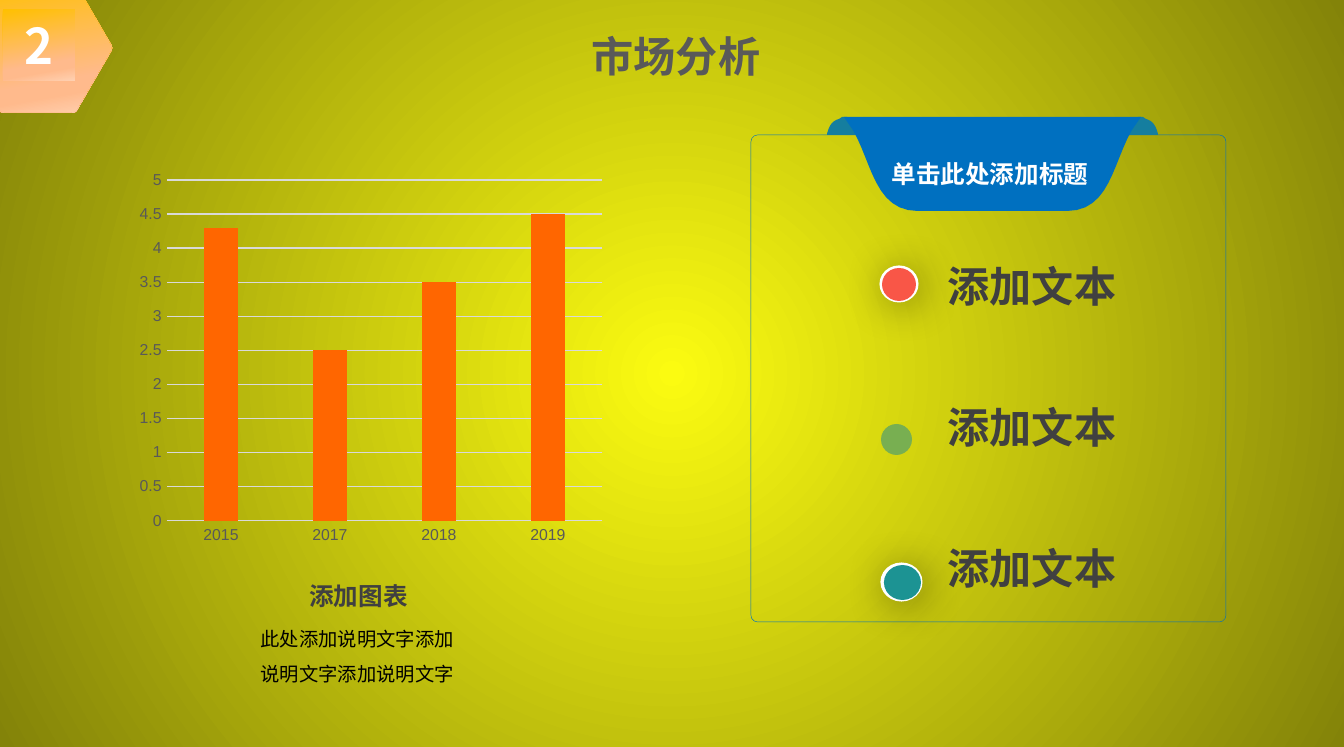
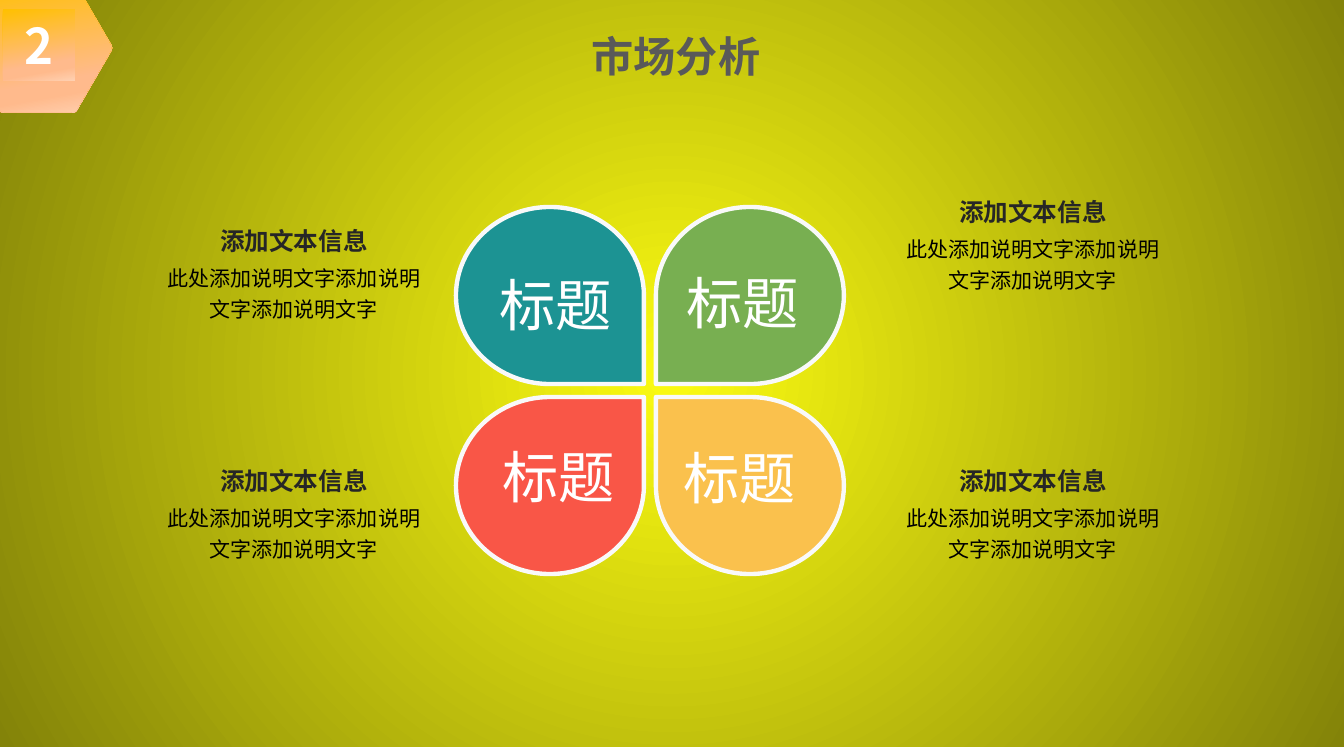
from dataclasses import dataclass
from math import cos, pi, sin

from lxml.etree import SubElement as Sub
from pptx import Presentation
from pptx.chart.data import CategoryChartData as Data
from pptx.dml.color import RGBColor as RGB
from pptx.enum.chart import XL_CHART_TYPE as Kind, XL_TICK_MARK as Tick
from pptx.enum.shapes import MSO_SHAPE as Form
from pptx.enum.text import MSO_ANCHOR as Anchor, MSO_AUTO_SIZE as Fit, PP_ALIGN as Align
from pptx.oxml.ns import qn
from pptx.util import Pt

UNIT = 914400 / 126.4
SIZE = (1344, 747)


@dataclass(frozen=True)
class Style:
    size: int
    color: str
    bold: bool = False
    align: Align = Align.LEFT
    line: float = 1.0
    before: float = 0


class Theme:
    font = "Noto Sans CJK SC"
    num_font = "Arial"
    back = ((0, "FBFB11"), (100, "838309"))
    badge = ((0, "FFC000"), (74, "FFBA8C"), (83, "FFBA8C"), (100, "FFD1B2"))
    ring = ((0, "FFF7F2"), (100, "F2F2F2"))
    teal, green, red, gold = "1C9393", "78AF51", "F95647", "FAC14D"
    blue, fold, bar = "0070C0", "157E9F", "FF6600"
    white, edge, grid, gray = "FFFFFF", "F9F9F9", "D9D9D9", "595959"
    title = Style(24, gray, True, Align.CENTER)
    number = Style(28, white, True, Align.CENTER)
    item = Style(24, "404040", True)
    next_item = Style(24, "404040", True, before=51.5)
    tag = Style(14, white, True)
    cap_head = Style(14, "404040", True, Align.CENTER)
    cap_text = Style(11, "000000", line=1.5, before=3)
    petal = Style(32, white)
    note_head = Style(14, "262626", True, Align.CENTER, 1.2)
    note_text = Style(12, "000000", False, Align.CENTER, 1.2, 3)


TITLE, NUMBER = "市场分析", "2"
ITEMS = ["添加文本"] * 3
TAG = "单击此处添加标题"
CAPTION = ("添加图表", "此处添加说明文字添加说明文字添加说明文字")
NOTE = ("添加文本信息", "此处添加说明文字添加说明文字添加说明文字")
YEARS = ("2015", "2017", "2018", "2019")
VALUES = (4.3, 2.5, 3.5, 4.5)

# ring box (or None), dot box, colour
DOTS = [
    ((882, 564, 39, 36), (884, 565, 37, 35), Theme.teal),
    (None, (881, 424, 31, 31), Theme.green),
    ((881, 267, 36, 34), (882, 268, 34, 33), Theme.red),
]
# column, row, colour, place of the label
PETALS = [
    (0, 0, Theme.teal, (487, 264)),
    (1, 1, Theme.gold, (671, 437)),
    (1, 0, Theme.green, (674, 262)),
    (0, 1, Theme.red, (490, 436)),
]
LABEL = "标题"
NOTES = [(150, 214), (889, 454), (150, 454), (889, 185)]

# Banner outlines: pairs are points, six numbers are a Bézier curve
FOLD = [(842, 117), (847, 117), (851, 119), (856, 121, 860, 126, 862, 134),
        (862, 135), (827, 135), (827, 134), (829, 126, 832, 121, 839, 119)]
HALF = [(844, 117), (853, 130), (872, 163, 875, 211, 918, 211)]
MIRROR = 1985


def px(*nums):
    return [round(n * UNIT) for n in nums]


def trace(steps):
    """Turn points and Bézier curves into plain points."""
    pts = []
    for step in steps:
        if len(step) == 2:
            pts.append(step)
            continue
        a, b, c, d = pts[-1], step[:2], step[2:4], step[4:]
        for k in range(1, 13):
            t = k / 12
            s = 1 - t
            pts.append(tuple(
                s**3 * a[i] + 3 * s * s * t * b[i] + 3 * s * t * t * c[i] + t**3 * d[i]
                for i in (0, 1)))
    return pts


def flip(pts):
    return [(MIRROR - x, y) for x, y in reversed(pts)]


def hexagon(x, y, rad, cut=0.05):
    """Corners of a hexagon, each rounded by a small curve."""
    tips = [(x + rad * cos(k * pi / 3), y + rad * sin(k * pi / 3)) for k in range(6)]
    pts = []
    for k, tip in enumerate(tips):
        start, end = ([tip[i] + cut * (far[i] - tip[i]) for i in (0, 1)]
                      for far in (tips[k - 1], tips[(k + 1) % 6]))
        for t in (0, 0.25, 0.5, 0.75, 1):
            pts.append(tuple((1 - t)**2 * start[i] + 2 * t * (1 - t) * tip[i]
                             + t * t * end[i] for i in (0, 1)))
    return pts


def blend(node, fill, stops, angle=None):
    """Gradient fill: linear at an angle, or round from the centre."""
    fill.gradient()
    grad = next(node.iter(qn("a:gradFill")))
    for part in list(grad):
        grad.remove(part)
    row = Sub(grad, qn("a:gsLst"))
    for pos, color in stops:
        stop = Sub(row, qn("a:gs"), pos=str(pos * 1000))
        Sub(stop, qn("a:srgbClr"), val=color)
    if angle is None:
        way = Sub(grad, qn("a:path"), path="circle")
        Sub(way, qn("a:fillToRect"), {side: "50000" for side in "ltrb"})
    else:
        Sub(grad, qn("a:lin"), ang=str(angle * 60000), scaled="0")


def paint(shape, fill=None, line=None, width=1.0, angle=90):
    shape.shadow.inherit = False
    if fill is None:
        shape.fill.background()
    elif isinstance(fill, str):
        shape.fill.solid()
        shape.fill.fore_color.rgb = RGB.from_string(fill)
    else:
        blend(shape.element, shape.fill, fill, angle)
    if line:
        shape.line.color.rgb = RGB.from_string(line)
        shape.line.width = Pt(width)
    else:
        shape.line.fill.background()
    return shape


def draw(slide, form, box, *look, **more):
    return paint(slide.shapes.add_shape(form, *px(*box)), *look, **more)


def outline(slide, pts, *look, **more):
    pts = [px(*pt) for pt in pts]
    pen = slide.shapes.build_freeform(*pts[0], scale=1.0)
    pen.add_line_segments(pts[1:], close=True)
    return paint(pen.convert_to_shape(), *look, **more)


def cast(shape):
    """Soft shadow down and to the right."""
    node = shape.element.spPr.find(qn("a:effectLst"))
    soft = Sub(node, qn("a:outerShdw"), blurRad=str(Pt(24)), dist=str(Pt(3)),
               dir="2700000", algn="tl", rotWithShape="0")
    Sub(Sub(soft, qn("a:srgbClr"), val="000000"), qn("a:alpha"), val="39000")


def write(frame, rows):
    frame.word_wrap = True
    frame.auto_size = Fit.NONE
    for k, (text, style) in enumerate(rows):
        par = frame.add_paragraph() if k else frame.paragraphs[0]
        par.text = text
        par.alignment = style.align
        par.line_spacing = style.line
        par.space_before = Pt(style.before)
        prop = par._p.get_or_add_pPr()
        prop.set("marL", "0")
        prop.set("indent", "0")
        Sub(prop, qn("a:buNone"))
        font = par.font
        font.size, font.bold = Pt(style.size), style.bold
        font.color.rgb = RGB.from_string(style.color)
        font.name = Theme.font
        Sub(prop.find(qn("a:defRPr")), qn("a:ea"), typeface=Theme.font)


def label(slide, box, *rows):
    write(slide.shapes.add_textbox(*px(*box)).text_frame, rows)


def hold(shape, box, rows):
    """Move a placeholder and fill it from the top."""
    shape.left, shape.top, shape.width, shape.height = px(*box)
    shape.text_frame.vertical_anchor = Anchor.TOP
    write(shape.text_frame, rows)


def start(deck, layout):
    """New slide with the shared title and numbered badge."""
    slide = deck.slides.add_slide(deck.slide_layouts[layout])
    title = slide.shapes.title
    hold(title, (537, 30, 278, 51), [(TITLE, Theme.title)])
    frame = title.text_frame
    frame.margin_left = frame.margin_right = frame.margin_top = frame.margin_bottom = 0
    for rad in (75, 74):
        outline(slide, hexagon(38, 48, rad), Theme.badge, angle=80)
    plate = draw(slide, Form.RECTANGLE, (3, 9, 72, 72), Theme.badge, angle=80)
    write(plate.text_frame, [(NUMBER, Theme.number)])
    return slide


def plot(slide, box):
    data = Data()
    data.categories = YEARS
    data.add_series("Series 1", VALUES)
    chart = slide.shapes.add_chart(Kind.COLUMN_CLUSTERED, *px(*box), data).chart
    chart.has_legend = chart.has_title = False
    chart.font.size, chart.font.name = Pt(10), Theme.num_font
    bars = chart.plots[0]
    bars.gap_width, bars.overlap, bars.vary_by_categories = 219, -27, False
    fill = bars.series[0].format.fill
    fill.solid()
    fill.fore_color.rgb = RGB.from_string(Theme.bar)
    cat, val = chart.category_axis, chart.value_axis
    for axis in (cat, val):
        axis.major_tick_mark = axis.minor_tick_mark = Tick.NONE
        font = axis.tick_labels.font
        font.size, font.name = Pt(9), Theme.num_font
        font.color.rgb = RGB.from_string(Theme.gray)
    val.minimum_scale, val.maximum_scale, val.major_unit = 0, 5, 0.5
    val.has_major_gridlines = True
    val.format.line.fill.background()
    for part in (cat, val.major_gridlines):
        part.format.line.color.rgb = RGB.from_string(Theme.grid)
        part.format.line.width = Pt(0.75)


def market(deck):
    slide = start(deck, 1)
    styles = (Theme.item, Theme.next_item, Theme.next_item)
    hold(slide.placeholders[1], (935, 254, 257, 370), list(zip(ITEMS, styles)))
    panel = draw(slide, Form.ROUNDED_RECTANGLE, (751, 135, 475, 487), None, Theme.blue, 0.25)
    panel.adjustments[0] = 0.014
    fold, half = trace(FOLD), trace(HALF)
    for pts, color in ((fold, Theme.fold), (flip(fold), Theme.fold),
                       (half + flip(half), Theme.blue)):
        outline(slide, pts, color)
    label(slide, (248, 575, 221, 118),
          *zip(CAPTION, (Theme.cap_head, Theme.cap_text)))
    for ring, dot, color in DOTS:
        if ring:
            cast(draw(slide, Form.OVAL, ring, Theme.ring, Theme.white, 1.75))
        draw(slide, Form.OVAL, dot, color)
    label(slide, (879, 153, 246, 43), (TAG, Theme.tag))
    plot(slide, (130, 163, 482, 389))


def petals(deck):
    slide = start(deck, 5)
    for col, row, color, _ in PETALS:
        box = (456 + 200 * col, 207 + 190 * row, 188, 177)
        leaf = draw(slide, Form.TEAR, box, color, Theme.edge, 2.5)
        turn = leaf.element.spPr.find(qn("a:xfrm"))
        turn.set("flipH", str(col))
        turn.set("flipV", str(1 - row))
    for *_, place in PETALS:
        label(slide, (*place, 154, 81), (LABEL, Theme.petal))
    for place in NOTES:
        label(slide, (*place, 288, 119), *zip(NOTE, (Theme.note_head, Theme.note_text)))


def main():
    deck = Presentation()
    deck.slide_width, deck.slide_height = px(*SIZE)
    master = deck.slide_master
    blend(master.element, master.background.fill, Theme.back)
    market(deck)
    petals(deck)
    deck.save("out.pptx")


if __name__ == "__main__":
    main()
